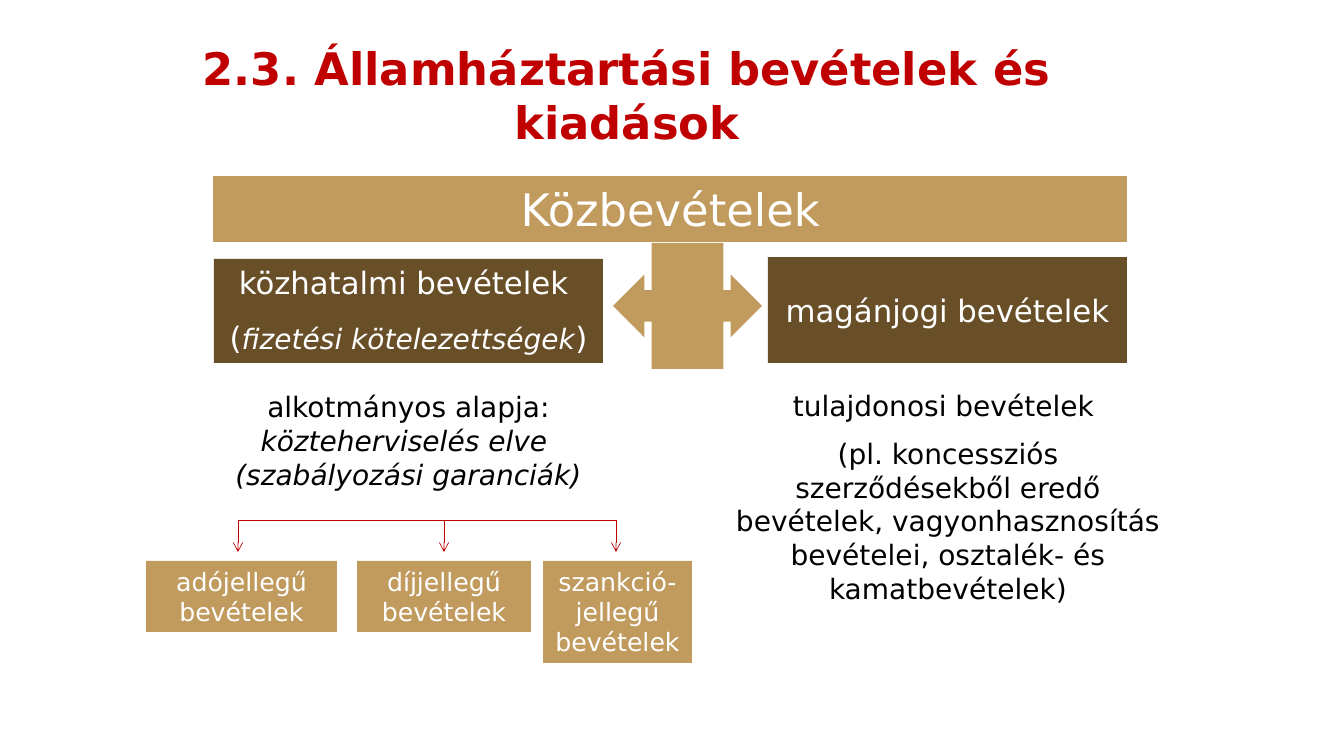
from lxml.etree import SubElement
from pptx import Presentation
from pptx.dml.color import RGBColor
from pptx.enum.shapes import MSO_CONNECTOR as Connector, MSO_SHAPE as Shape
from pptx.enum.text import MSO_ANCHOR as Anchor, PP_ALIGN as Align
from pptx.oxml.ns import qn
from pptx.util import Pt

PX = 9144000 / 1008
GOLD = RGBColor(0xC1, 0x9A, 0x5E)
BROWN = RGBColor(0x68, 0x4F, 0x28)
RED = RGBColor(0xC0, 0x00, 0x00)
WHITE = RGBColor(0xFF, 0xFF, 0xFF)
BLACK = RGBColor(0x00, 0x00, 0x00)
FONT = "DejaVu Sans"


def px(length):
    """Turn px into EMU."""
    return round(length * PX)


def span(text, **style):
    """Pair a text with its font settings."""
    return text, style


class Page:
    """Holds the style and the current slide."""

    def __init__(self, deck):
        self.shapes = deck.slides.add_slide(deck.slide_layouts[6]).shapes

    def fill_text(self, box, paragraphs, size, color, gap=0, anchor=Anchor.TOP):
        """Fill a box with centred paragraphs of spans."""
        frame = box.text_frame
        frame.word_wrap = True
        frame.vertical_anchor = anchor
        for index, spans in enumerate(paragraphs):
            para = frame.add_paragraph() if index else frame.paragraphs[0]
            para.alignment = Align.CENTER
            para.space_before = Pt(gap if index else 0)
            for text, style in spans:
                run = para.add_run()
                run.text = text
                font = run.font
                font.name = FONT
                font.size = Pt(style.get("size", size))
                font.bold = style.get("bold", False)
                font.italic = style.get("italic", False)
                font.color.rgb = color

    def shape(self, kind, bounds, fill):
        """Add a plain filled shape."""
        shape = self.shapes.add_shape(kind, *map(px, bounds))
        shape.shadow.inherit = False
        shape.fill.solid()
        shape.fill.fore_color.rgb = fill
        shape.line.fill.background()
        return shape

    def block(self, bounds, fill, paragraphs, size, **layout):
        """Add a filled rectangle with white text."""
        box = self.shape(Shape.RECTANGLE, bounds, fill)
        self.fill_text(box, paragraphs, size, WHITE, **layout)
        return box

    def text(self, bounds, paragraphs, size, color=BLACK, **layout):
        """Add a text box."""
        box = self.shapes.add_textbox(*map(px, bounds))
        self.fill_text(box, paragraphs, size, color, **layout)

    def line(self, start, end, arrow=False):
        """Add a thin red line, with an arrowhead if asked."""
        line = self.shapes.add_connector(Connector.STRAIGHT, *map(px, start + end))
        line.line.color.rgb = RED
        line.line.width = Pt(0.5)
        properties = line.element.spPr
        if arrow:
            SubElement(properties.find(qn("a:ln")), qn("a:tailEnd"), type="arrow")
        SubElement(properties, qn("a:effectLst"))


def main():
    """Build the slide on public revenues."""
    deck = Presentation()
    deck.slide_width, deck.slide_height = px(1344), px(756)
    page = Page(deck)

    page.text((101, 36, 1052, 119),
              [[span("2.3. Államháztartási bevételek és kiadások", bold=True)]],
              32, RED)
    header = page.block((214, 177, 913, 65), GOLD, [[span("Közbevételek")]], 32)
    header.line.color.rgb = GOLD
    header.line.width = Pt(0.75)

    page.block((214, 259, 389, 104), BROWN, [
        [span("közhatalmi bevételek ")],
        [span("("), span("fizetési kötelezettségek", size=20, italic=True), span(")")],
    ], 22, gap=13)
    page.block((768, 257, 359, 106), BROWN, [[span("magánjogi bevételek")]], 22,
               anchor=Anchor.MIDDLE)
    page.shape(Shape.LEFT_RIGHT_ARROW_CALLOUT, (613, 243, 149, 126), GOLD)

    page.text((190, 385, 437, 112), [
        [span("alkotmányos alapja: "), span("közteherviselés elve ", italic=True)],
        [span("(szabályozási garanciák)", italic=True)],
    ], 20)
    page.text((718, 384, 460, 231), [
        [span("tulajdonosi bevételek ")],
        [span("(pl. koncessziós szerződésekből eredő bevételek, vagyonhasznosítás "
              "bevételei, osztalék- és kamatbevételek)")],
    ], 20, gap=10)

    page.line((238, 520), (617, 520))
    branches = [
        (238, 146, 191, 71, "adójellegű bevételek"),
        (444, 357, 174, 71, "díjjellegű bevételek"),
        (616, 543, 149, 102, "szankció-jellegű bevételek"),
    ]
    for center, left, width, height, label in branches:
        page.line((center, 520), (center, 552), arrow=True)
        page.block((left, 561, width, height), GOLD, [[span(label)]], 18)

    deck.save("out.pptx")


if __name__ == "__main__":
    main()
